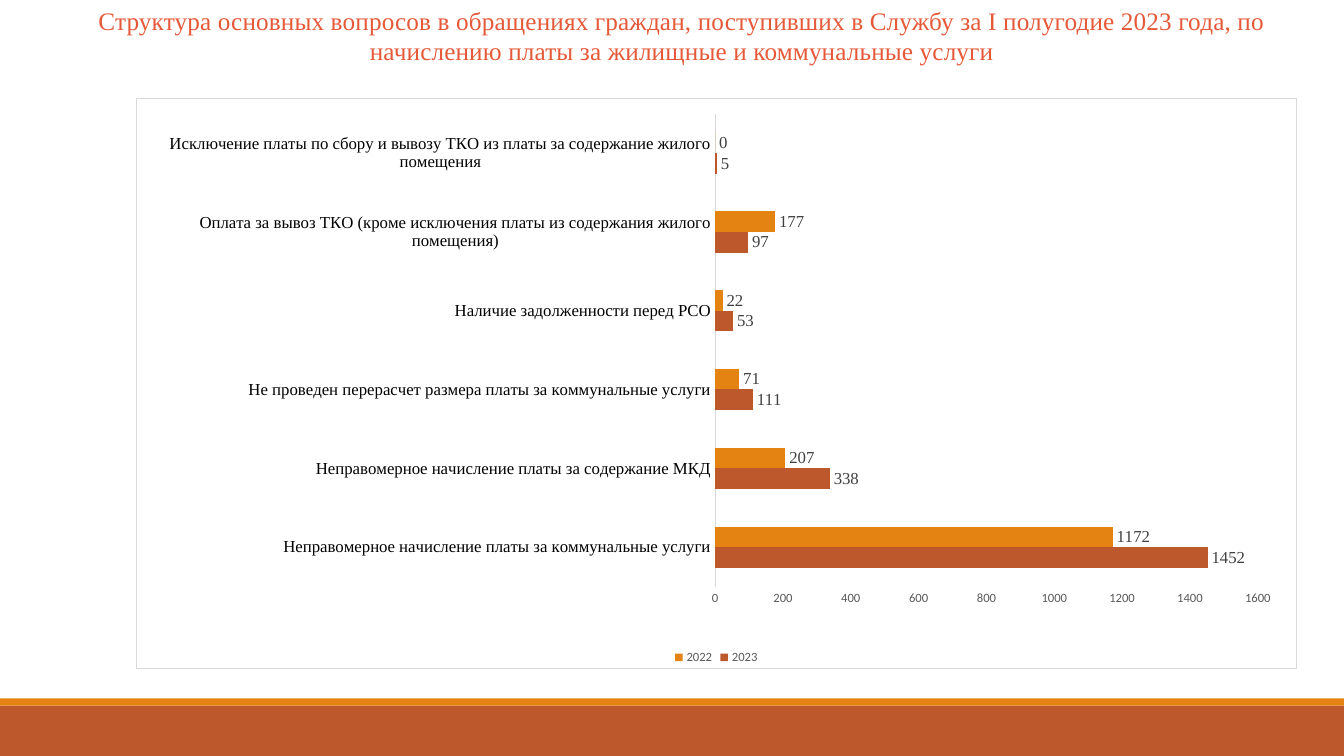
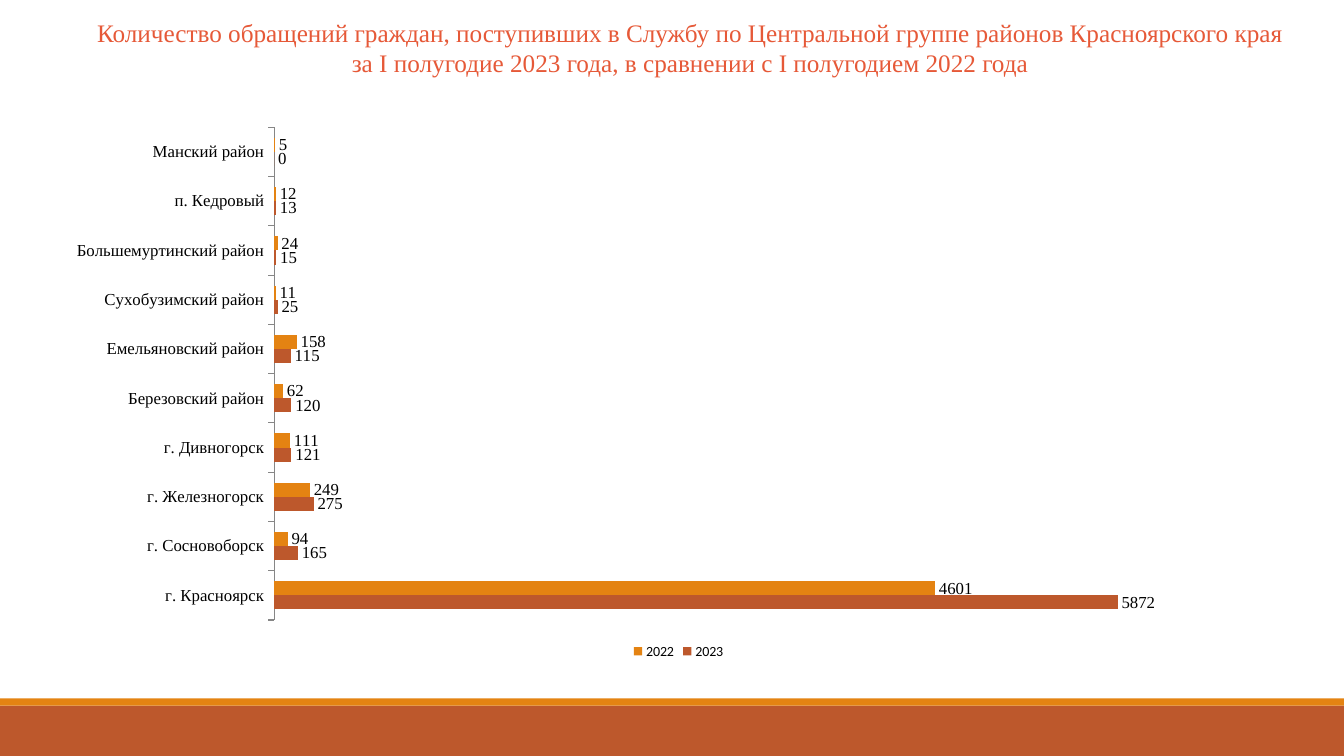
from pptx import Presentation
from pptx.chart.data import CategoryChartData
from pptx.dml.color import RGBColor
from pptx.enum.chart import XL_CHART_TYPE, XL_LABEL_POSITION, XL_LEGEND_POSITION, XL_TICK_MARK
from pptx.enum.shapes import MSO_SHAPE
from pptx.enum.text import MSO_ANCHOR, MSO_AUTO_SIZE, PP_ALIGN
from pptx.oxml import parse_xml
from pptx.oxml.ns import nsdecls, qn
from pptx.util import Inches, Pt

RUST, ORANGE, CORAL = "BD582C", "E48312", "E65938"
BLACK, GRAY, PALE = "000000", "595959", "D9D9D9"
SERIF, SANS = "Times New Roman", "Calibri"


def paint(obj, color):
    """Set a solid colour on a fill or a font."""
    if hasattr(obj, "solid"):
        obj.solid()
        obj.fore_color.rgb = RGBColor.from_string(color)
    else:
        obj.color.rgb = RGBColor.from_string(color)


def write(frame, text, size=18, font=SERIF, color=CORAL, align=PP_ALIGN.CENTER, spc=0):
    """Fill a text frame, one paragraph per line."""
    frame.text = text
    for para in frame.paragraphs:
        para.alignment = align
        para.line_spacing = 1
        para.space_before = Pt(0)
        for run in para.runs:
            run.font.size, run.font.name = Pt(size), font
            paint(run.font, color)
            if spc:
                run.font._element.set("spc", str(spc))


# What differs from slide to slide
pages = [
    dict(
        title="Структура основных вопросов в обращениях граждан, поступивших в Службу "
              "за I полугодие 2023 года, по начислению платы за жилищные и коммунальные услуги",
        spot=(0.4, 0, 12.73, 0.71), spc=10,
        area=(1.35, 0.97, 11.51, 5.67), plot=(0.499, 0.027, 0.468, 0.829),
        rows=[
            ("Неправомерное начисление платы за коммунальные услуги", 1452, 1172),
            ("Неправомерное начисление платы за содержание МКД", 338, 207),
            ("Не проведен перерасчет размера платы за коммунальные услуги", 111, 71),
            ("Наличие задолженности перед РСО", 53, 22),
            ("Оплата за вывоз ТКО (кроме исключения платы из содержания жилого помещения)", 97, 177),
            ("Исключение платы по сбору и вывозу ТКО из платы за содержание жилого помещения", 5, 0),
        ],
        gap=182, top=1600, step=200, scale=True, frame=True,
        tick=XL_TICK_MARK.NONE, line=PALE, label="404040", key=(9, GRAY),
    ),
    dict(
        title="Количество обращений граждан, поступивших в Службу по Центральной группе "
              "районов Красноярского края\n"
              "за I полугодие 2023 года, в сравнении с I полугодием 2022 года",
        spot=(0.75, 0.12, 12.19, 0.71), spc=0,
        area=(0.52, 1.16, 12.42, 5.42), plot=(0.177, 0.019, 0.803, 0.902),
        rows=[
            ("г. Красноярск", 5872, 4601),
            ("г. Сосновоборск", 165, 94),
            ("г. Железногорск", 275, 249),
            ("г. Дивногорск", 121, 111),
            ("Березовский район", 120, 62),
            ("Емельяновский район", 115, 158),
            ("Сухобузимский район", 25, 11),
            ("Большемуртинский район", 15, 24),
            ("п. Кедровый", 13, 12),
            ("Манский район", 0, 5),
        ],
        gap=150, top=7000, step=1000, scale=False, frame=False,
        tick=XL_TICK_MARK.OUTSIDE, line="868686", label=BLACK, key=(10, BLACK),
    ),
]

deck = Presentation()
deck.slide_width, deck.slide_height = Inches(13.33), Inches(7.5)
layout = deck.slide_layouts[5]

for num, page in enumerate(pages):
    slide = deck.slides.add_slide(layout)

    # Bottom bands, moved once into the shared layout
    if num == 0:
        for top, high, color in [(7, 0.5, RUST), (6.93, 0.07, ORANGE)]:
            band = slide.shapes.add_shape(
                MSO_SHAPE.RECTANGLE, 0, Inches(top), deck.slide_width, Inches(high))
            band.shadow.inherit = False
            band.line.fill.background()
            paint(band.fill, color)
            layout.shapes._spTree.append(band._element)

    # Title
    title = slide.shapes.title
    title.left, title.top, title.width, title.height = map(Inches, page["spot"])
    frame = title.text_frame
    frame.word_wrap = True
    frame.auto_size = MSO_AUTO_SIZE.NONE
    frame.vertical_anchor = MSO_ANCHOR.TOP
    write(frame, page["title"], spc=page["spc"])

    # Chart data
    names, now, past = zip(*page["rows"])
    data = CategoryChartData()
    data.categories = names
    data.add_series("2023", now)
    data.add_series("2022", past)
    chart = slide.shapes.add_chart(
        XL_CHART_TYPE.BAR_CLUSTERED, *map(Inches, page["area"]), data).chart
    chart.has_title = False
    chart.font.size, chart.font.name = Pt(10), SANS
    paint(chart.font, BLACK)

    # Bars and their labels
    bars = chart.plots[0]
    bars.gap_width = page["gap"]
    bars.vary_by_categories = False
    for series, color in zip(bars.series, (RUST, ORANGE)):
        paint(series.format.fill, color)
        series.invert_if_negative = False
        labels = series.data_labels
        labels.show_value = True
        labels.position = XL_LABEL_POSITION.OUTSIDE_END
        labels.font.size, labels.font.name = Pt(12), SERIF
        paint(labels.font, page["label"])

    # Axes
    cats, vals = chart.category_axis, chart.value_axis
    cats.major_tick_mark = page["tick"]
    cats.tick_labels.font.size, cats.tick_labels.font.name = Pt(12), SERIF
    paint(cats.tick_labels.font, BLACK)
    cats.format.line.width = Pt(0.75)
    paint(cats.format.line.fill, page["line"])
    vals.has_major_gridlines = False
    vals.minimum_scale, vals.maximum_scale = 0, page["top"]
    vals.major_unit = page["step"]
    vals.visible = page["scale"]
    if page["scale"]:
        vals.major_tick_mark = XL_TICK_MARK.NONE
        vals.tick_labels.font.size, vals.tick_labels.font.name = Pt(9), SANS
        paint(vals.tick_labels.font, GRAY)
        vals.format.line.fill.background()

    # Legend
    chart.has_legend = True
    legend = chart.legend
    legend.position = XL_LEGEND_POSITION.BOTTOM
    legend.include_in_layout = False
    size, color = page["key"]
    legend.font.size, legend.font.name = Pt(size), SANS
    paint(legend.font, color)

    # Inner plot area
    space = chart._chartSpace
    plot = space.find(".//" + qn("c:plotArea"))
    for old in plot.findall(qn("c:layout")):
        plot.remove(old)
    sides = "".join(f'<c:{tag} val="{val}"/>' for tag, val in zip("xywh", page["plot"]))
    plot.insert(0, parse_xml(
        f'<c:layout {nsdecls("c")}><c:manualLayout><c:layoutTarget val="inner"/>'
        f'<c:xMode val="edge"/><c:yMode val="edge"/>{sides}</c:manualLayout></c:layout>'))

    # Chart background and border
    if page["frame"]:
        space.find(qn("c:chart")).addnext(parse_xml(
            f'<c:spPr {nsdecls("c", "a")}><a:solidFill><a:srgbClr val="FFFFFF"/></a:solidFill>'
            f'<a:ln w="{Pt(0.75)}"><a:solidFill><a:srgbClr val="{PALE}"/></a:solidFill></a:ln></c:spPr>'))

deck.save("out.pptx")
